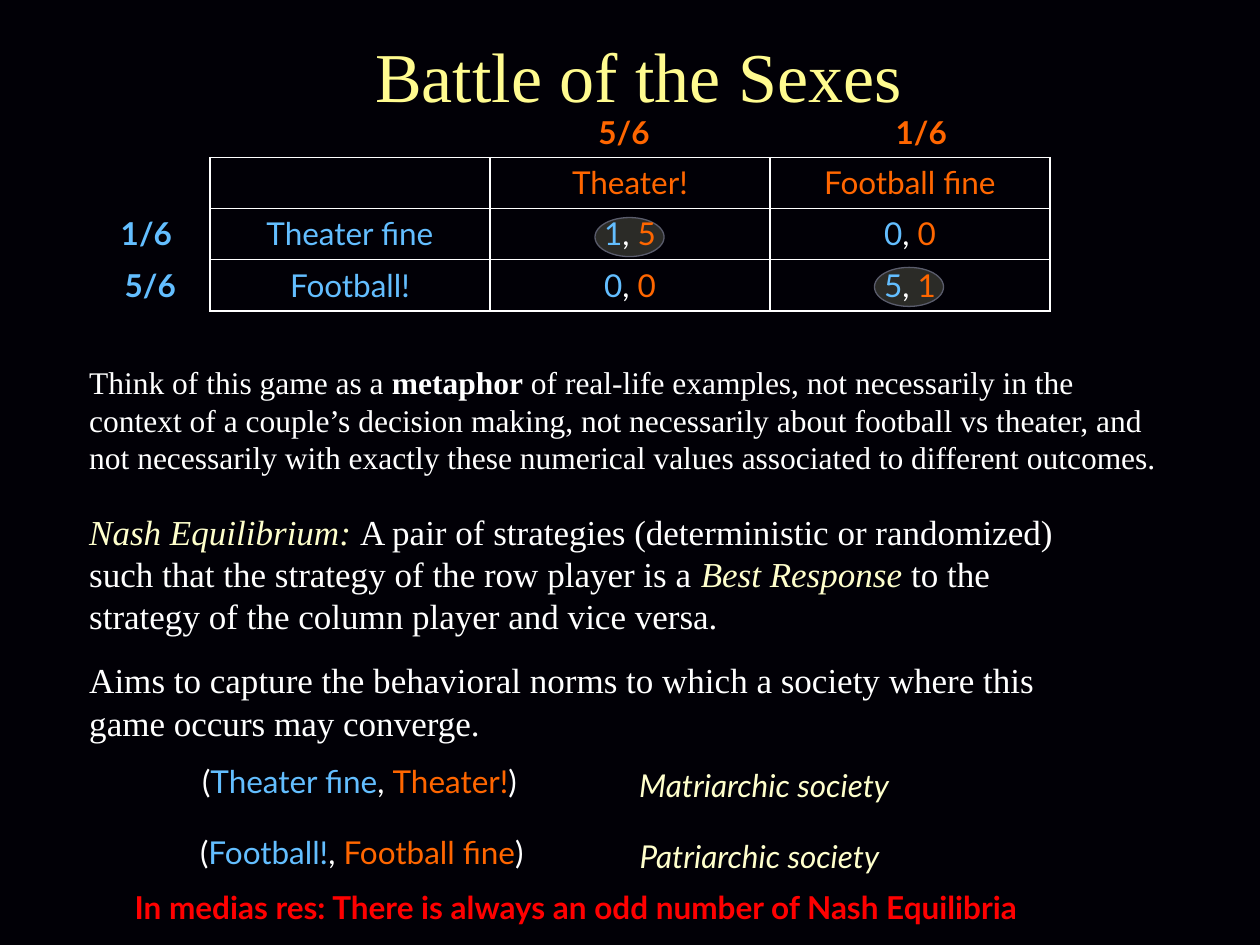
from lxml import etree
from pptx import Presentation
from pptx.dml.color import RGBColor
from pptx.enum import shapes, text
from pptx.oxml import ns
from pptx.util import Pt

BLACK = RGBColor(0x01, 0x00, 0x06)
WHITE = RGBColor(0xFF, 0xFF, 0xFF)
BLUE = RGBColor(0x63, 0xBE, 0xFF)
ORANGE = RGBColor(0xFF, 0x66, 0x00)
YELLOW = RGBColor(0xFF, 0xFB, 0x8F)
CREAM = RGBColor(0xFF, 0xFF, 0xCC)
RED = RGBColor(0xFF, 0x00, 0x00)
GREY = RGBColor(0x5A, 0x5C, 0x6C)
SERIF, SANS = "Times New Roman", "Lato"
BOLD, ITALIC = {"bold": True}, {"italic": True}
CENTER = text.PP_ALIGN.CENTER


def write(frame, parts, font=SANS, size=18, align=text.PP_ALIGN.LEFT):
    para = frame.paragraphs[0]
    para.alignment = align
    for wording, color, *styles in parts:
        span = para.add_run()
        span.text = wording
        span.font.color.rgb = color
        values = {"name": font, "size": Pt(size)}
        for style in styles:
            values.update(style)
        for name, value in values.items():
            setattr(span.font, name, value)


def add_text(left, top, width, height, parts, wrap=False, **options):
    box = page.shapes.add_textbox(Pt(left), Pt(top), Pt(width), Pt(height))
    box.text_frame.word_wrap = wrap
    box.text_frame.auto_size = text.MSO_AUTO_SIZE.SHAPE_TO_FIT_TEXT
    write(box.text_frame, parts, **options)


deck = Presentation()
deck.slide_width, deck.slide_height = Pt(720), Pt(540)
page = deck.slides.add_slide(deck.slide_layouts[6])
page.background.fill.solid()
page.background.fill.fore_color.rgb = BLACK

for left, top in [(340, 124.3), (499.7, 152.8)]:
    marker = page.shapes.add_shape(
        shapes.MSO_SHAPE.OVAL, Pt(left), Pt(top), Pt(39.5), Pt(22.3))
    marker.shadow.inherit = False
    marker.fill.solid()
    marker.fill.fore_color.rgb = CREAM
    tint = marker.fill._xPr.find(".//" + ns.qn("a:srgbClr"))
    etree.SubElement(tint, ns.qn("a:alpha"), val="17000")
    marker.line.color.rgb = GREY
    marker.line.width = Pt(0.75)

payoffs = [
    [[], [("Theater!", ORANGE)], [("Football fine", ORANGE)]],
    [[("Theater fine", BLUE)], ("1", "5"), ("0", "0")],
    [[("Football!", BLUE)], ("0", "0"), ("5", "1")],
    [[], [], []],
]
table = page.shapes.add_table(4, 3, Pt(120), Pt(90), Pt(480), Pt(116.8)).table
table.first_row = table.horz_banding = False
for column in table.columns:
    column.width = Pt(160)
for row in table.rows:
    row.height = Pt(29.2)
for r, row in enumerate(payoffs):
    for c, entry in enumerate(row):
        cell = table.cell(r, c)
        properties = cell._tc.get_or_add_tcPr()
        for side in "LRTB":
            edge = etree.SubElement(properties, ns.qn("a:ln" + side), w="12700")
            if r < 3 or side == "T":
                paint = etree.SubElement(edge, ns.qn("a:solidFill"))
                etree.SubElement(paint, ns.qn("a:srgbClr"), val=str(WHITE))
            else:
                etree.SubElement(edge, ns.qn("a:noFill"))
        cell.fill.background()
        if isinstance(entry, tuple):
            entry = [(entry[0], BLUE), (", ", WHITE), (entry[1], ORANGE)]
        write(cell.text_frame, entry, align=CENTER)
table.cell(3, 0).merge(table.cell(3, 2))

outcomes = [
    (105.1, 432, 205.2, "Theater fine", "Theater!"),
    (105.8, 472.3, 206.6, "Football!", "Football fine"),
]
for left, top, width, row_move, column_move in outcomes:
    add_text(left, top, width, 29, [
        ("(", WHITE), (row_move, BLUE), (", ", WHITE),
        (column_move, ORANGE), (") ", WHITE)], align=CENTER)

add_text(207.4, 15.2, 318.2, 55.7, [("Battle of the Sexes", YELLOW)],
         font=SERIF, size=40)

labels = [
    (69.8, 504, 602, "In medias res: There is always an odd number of Nash Equilibria", RED, BOLD),
    (61.9, 118.8, 48, "1/6", BLUE, BOLD),
    (64.1, 148.3, 48, "5/6", BLUE, BOLD),
    (504.7, 60.8, 48, "1/6", ORANGE, BOLD),
    (334.8, 61.2, 48, "5/6", ORANGE, BOLD),
    (358.2, 434.3, 168.5, "Matriarchic society", CREAM, ITALIC),
    (358.4, 475, 164.2, "Patriarchic society", CREAM, ITALIC),
]
for left, top, width, *label in labels:
    add_text(left, top, width, 29, [label])

passages = [
    (288, 584, 80, 20, [
        ("Nash Equilibrium: ", CREAM, ITALIC),
        ("A pair of strategies (deterministic or randomized) such that the "
         "strategy of the row player is a ", WHITE),
        ("Best Response", CREAM, ITALIC),
        (" to the strategy of the column player and vice versa.", WHITE)]),
    (203.8, 627, 72.7, 18, [
        ("Think of this game as a ", WHITE),
        ("metaphor", WHITE, BOLD),
        (" of real-life examples, not necessarily in the context of a couple’s "
         "decision making, not necessarily about football vs theater, and not "
         "necessarily with exactly these numerical values associated to "
         "different outcomes.", WHITE)]),
    (373, 599, 55.7, 20, [
        ("Aims to capture the behavioral norms to which a society where this "
         "game occurs may converge.", WHITE)]),
]
for top, width, height, size, parts in passages:
    add_text(43.9, top, width, height, parts, wrap=True, font=SERIF, size=size)

deck.save("out.pptx")
